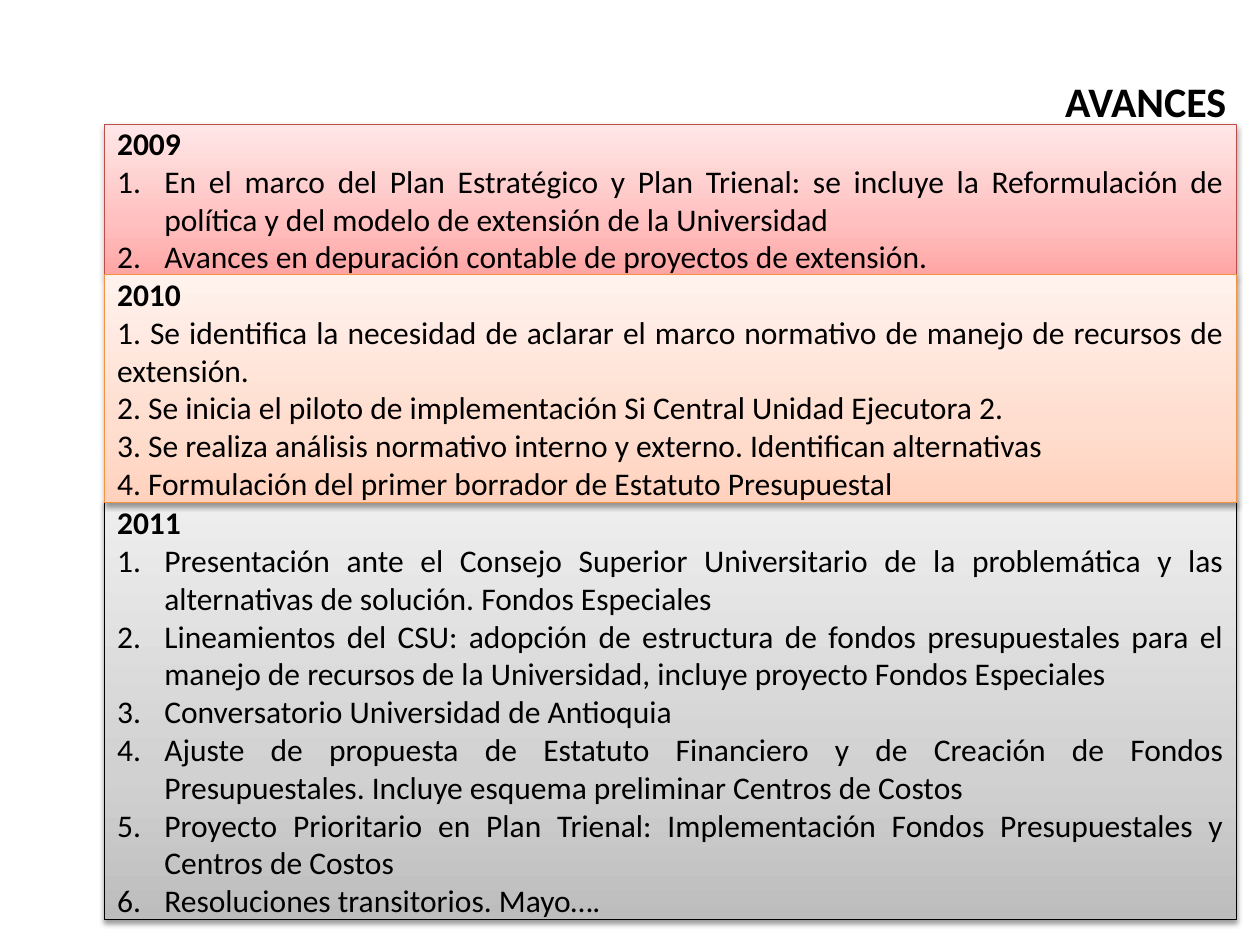
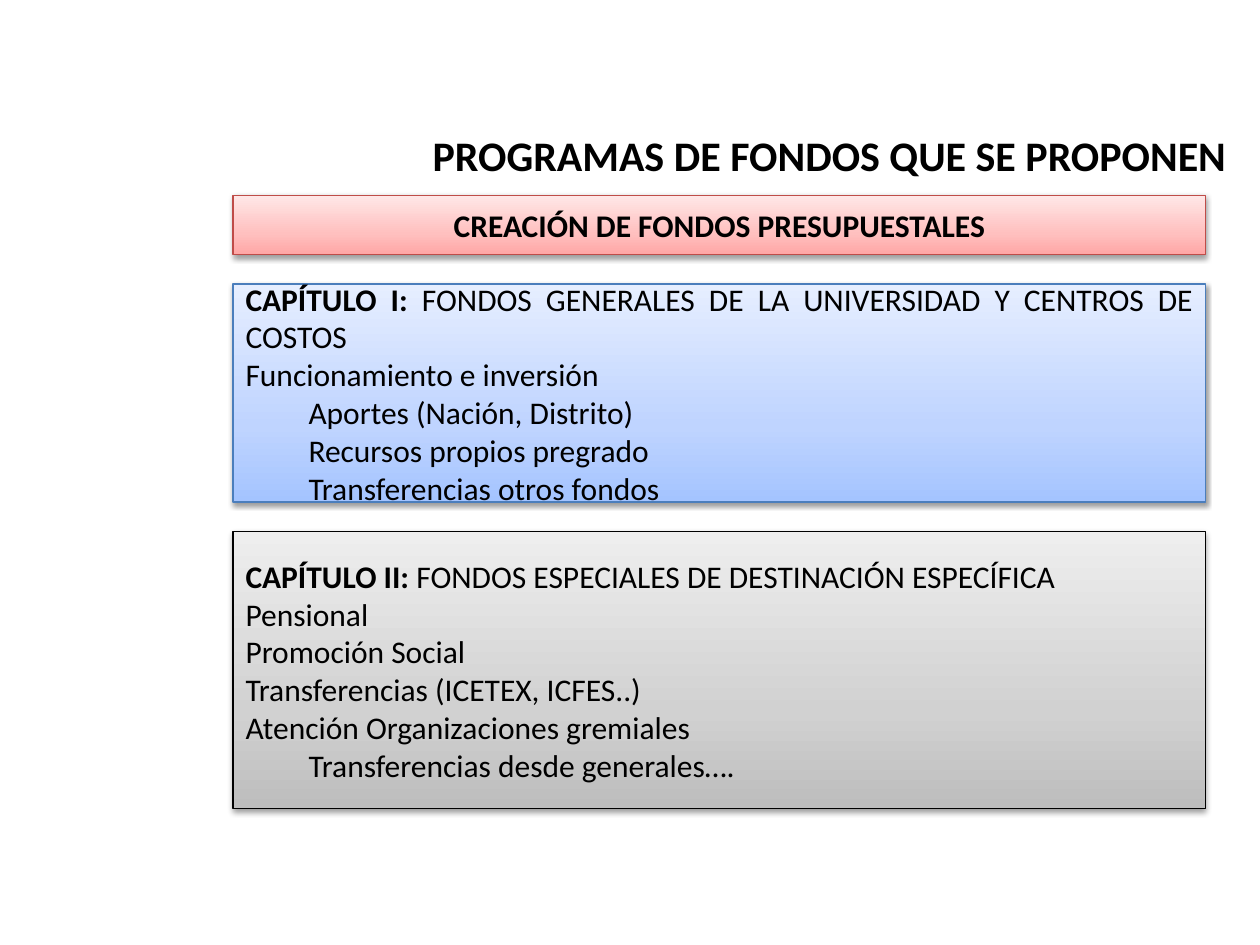
import pptx
import pptx.dml.color
import pptx.enum.shapes
import pptx.enum.text
import pptx.oxml
import pptx.oxml.ns
import pptx.util
from lxml import etree

Pt = pptx.util.Pt
ALIGN = pptx.enum.text.PP_ALIGN
FONT = "Calibri"
BLACK = "000000"
NUMBER_INDENT = 27

# Line colour, then gradient colours from bottom to top
RED = ("BF4C48", ("FFA6A5", "FFC0BF", "FFE7E7"))
ORANGE = ("F69240", ("FFD2BD", "FFDED0", "FFF2ED"))
GREY = (BLACK, ("BDBDBD", "D1D1D1", "EEEEEE"))
BLUE = ("4B7EBC", ("A4C4FF", "BFD4FF", "E6EEFF"))
GRADIENT_STOPS = (0, 35, 100)

# Each box: height, palette, alignment, numbered, bold lead, text after the lead, further lines
SLIDES = [
    {
        "title": "AVANCES", "title_top": 31.7, "title_height": 51.1,
        "left": 59.8, "top": 71.3, "width": 646.6, "gap": 0,
        "boxes": [
            (85.5, RED, ALIGN.JUSTIFY, True, "2009", "", [
                "En el marco del Plan Estratégico y Plan Trienal: se incluye la "
                "Reformulación de política y del modelo de extensión de la Universidad",
                "Avances en depuración contable de proyectos de extensión. ",
            ]),
            (130.4, ORANGE, ALIGN.JUSTIFY, False, "2010", "", [
                "1. Se identifica la necesidad de aclarar el marco normativo de manejo "
                "de recursos de extensión. ",
                "2. Se inicia el piloto de implementación Si Central Unidad Ejecutora 2. ",
                "3. Se realiza análisis normativo interno y externo. Identifican alternativas",
                "4. Formulación del primer borrador de Estatuto Presupuestal",
            ]),
            (238.4, GREY, ALIGN.JUSTIFY, True, "2011", "", [
                "Presentación ante el Consejo Superior Universitario de la problemática "
                "y las alternativas de solución. Fondos Especiales",
                "Lineamientos del CSU: adopción de estructura de fondos presupuestales para "
                "el manejo de recursos de la Universidad, incluye proyecto Fondos Especiales",
                "Conversatorio Universidad de Antioquia",
                "Ajuste de propuesta de Estatuto Financiero y de Creación de Fondos "
                "Presupuestales. Incluye esquema preliminar Centros de Costos",
                "Proyecto Prioritario en Plan Trienal: Implementación Fondos "
                "Presupuestales y Centros de Costos",
                "Resoluciones transitorios. Mayo….",
            ]),
        ],
    },
    {
        "title": "PROGRAMAS DE FONDOS QUE SE PROPONEN", "title_top": 49, "title_height": 79.2,
        "left": 133.2, "top": 111.6, "width": 555.8, "gap": 16.9,
        "boxes": [
            (33.8, RED, ALIGN.CENTER, False, "CREACIÓN DE FONDOS PRESUPUESTALES", "", []),
            (124.6, BLUE, ALIGN.JUSTIFY, False, "CAPÍTULO I: ",
             "FONDOS GENERALES DE LA UNIVERSIDAD Y CENTROS DE COSTOS", [
                 "Funcionamiento e inversión",
                 "\tAportes (Nación, Distrito)",
                 "\tRecursos propios pregrado",
                 "\tTransferencias otros fondos",
             ]),
            (158.4, GREY, ALIGN.LEFT, False, "CAPÍTULO II: ",
             "FONDOS ESPECIALES DE DESTINACIÓN ESPECÍFICA", [
                 "Pensional",
                 "Promoción Social",
                 "Transferencias (ICETEX, ICFES..)",
                 "Atención Organizaciones gremiales",
                 "\tTransferencias desde generales….",
             ]),
        ],
    },
]


def rgb(color):
    return pptx.dml.color.RGBColor.from_string(color)


def add_element(parent, tag, **attributes):
    element = etree.SubElement(parent, pptx.oxml.ns.qn(tag))
    for name, value in attributes.items():
        element.set(name, str(value))
    return element


def style_paragraph(paragraph, size, alignment, bold=None):
    paragraph.alignment = alignment
    font = paragraph.font
    font.name, font.size, font.bold = FONT, Pt(size), bold
    font.color.rgb = rgb(BLACK)


def add_title(slide, text, top, height):
    frame = slide.shapes.add_textbox(Pt(59.8), Pt(top), Pt(648), Pt(height)).text_frame
    frame.word_wrap = True
    frame.vertical_anchor = pptx.enum.text.MSO_ANCHOR.MIDDLE
    frame.text = text
    style_paragraph(frame.paragraphs[0], 24, ALIGN.RIGHT, True)


def fill_gradient(shape, colors):
    shape.fill.gradient()
    shape.fill.gradient_angle = 90
    stops = shape.element.spPr.find(".//" + pptx.oxml.ns.qn("a:gsLst"))
    for stop in list(stops):
        stops.remove(stop)
    for position, color in zip(GRADIENT_STOPS, colors):
        stop = add_element(stops, "a:gs", pos=position * 1000)
        add_element(stop, "a:srgbClr", val=color)


def add_shadow(shape):
    shape.shadow.inherit = False
    effects = shape.element.spPr.find(pptx.oxml.ns.qn("a:effectLst"))
    shadow = add_element(effects, "a:outerShdw", blurRad=Pt(3.1), dist=Pt(1.6),
                         dir=90 * 60000, rotWithShape=0)
    color = add_element(shadow, "a:srgbClr", val=BLACK)
    add_element(color, "a:alpha", val=38000)


def number_paragraph(paragraph):
    properties = paragraph._p.get_or_add_pPr()
    properties.set("marL", str(Pt(NUMBER_INDENT)))
    properties.set("indent", str(-Pt(NUMBER_INDENT)))
    bullet = pptx.oxml.parse_xml(
        f'<a:buAutoNum {pptx.oxml.ns.nsdecls("a")} type="arabicPeriod"/>')
    properties.insert(0, bullet)


def add_box(slide, left, top, width, box):
    height, (line_color, gradient), alignment, numbered, lead, rest, lines = box
    shape = slide.shapes.add_shape(pptx.enum.shapes.MSO_SHAPE.RECTANGLE,
                                   Pt(left), Pt(top), Pt(width), Pt(height))
    fill_gradient(shape, gradient)
    shape.line.color.rgb = rgb(line_color)
    shape.line.width = Pt(0.75)
    add_shadow(shape)

    frame = shape.text_frame
    frame.word_wrap = True
    frame.vertical_anchor = pptx.enum.text.MSO_ANCHOR.MIDDLE
    heading = frame.paragraphs[0]
    style_paragraph(heading, 18, alignment)
    for text, bold in ((lead, True), (rest, False)):
        if text:
            run = heading.add_run()
            run.text, run.font.bold = text, bold
    for line in lines:
        paragraph = frame.add_paragraph()
        paragraph.text = line
        style_paragraph(paragraph, 18, alignment)
        if numbered:
            number_paragraph(paragraph)


def add_stack(slide, left, top, width, gap, boxes):
    """Stack three boxes downwards; the middle one is drawn last, over its neighbours."""
    tops = []
    for box in boxes:
        tops.append(top)
        top += box[0] + gap
    for index in (0, 2, 1):
        add_box(slide, left, tops[index], width, boxes[index])


def main():
    presentation = pptx.Presentation()
    presentation.slide_width, presentation.slide_height = Pt(720), Pt(540)
    for content in SLIDES:
        slide = presentation.slides.add_slide(presentation.slide_layouts[6])
        add_title(slide, content["title"], content["title_top"], content["title_height"])
        add_stack(slide, content["left"], content["top"], content["width"],
                  content["gap"], content["boxes"])
    presentation.save("out.pptx")


if __name__ == "__main__":
    main()
